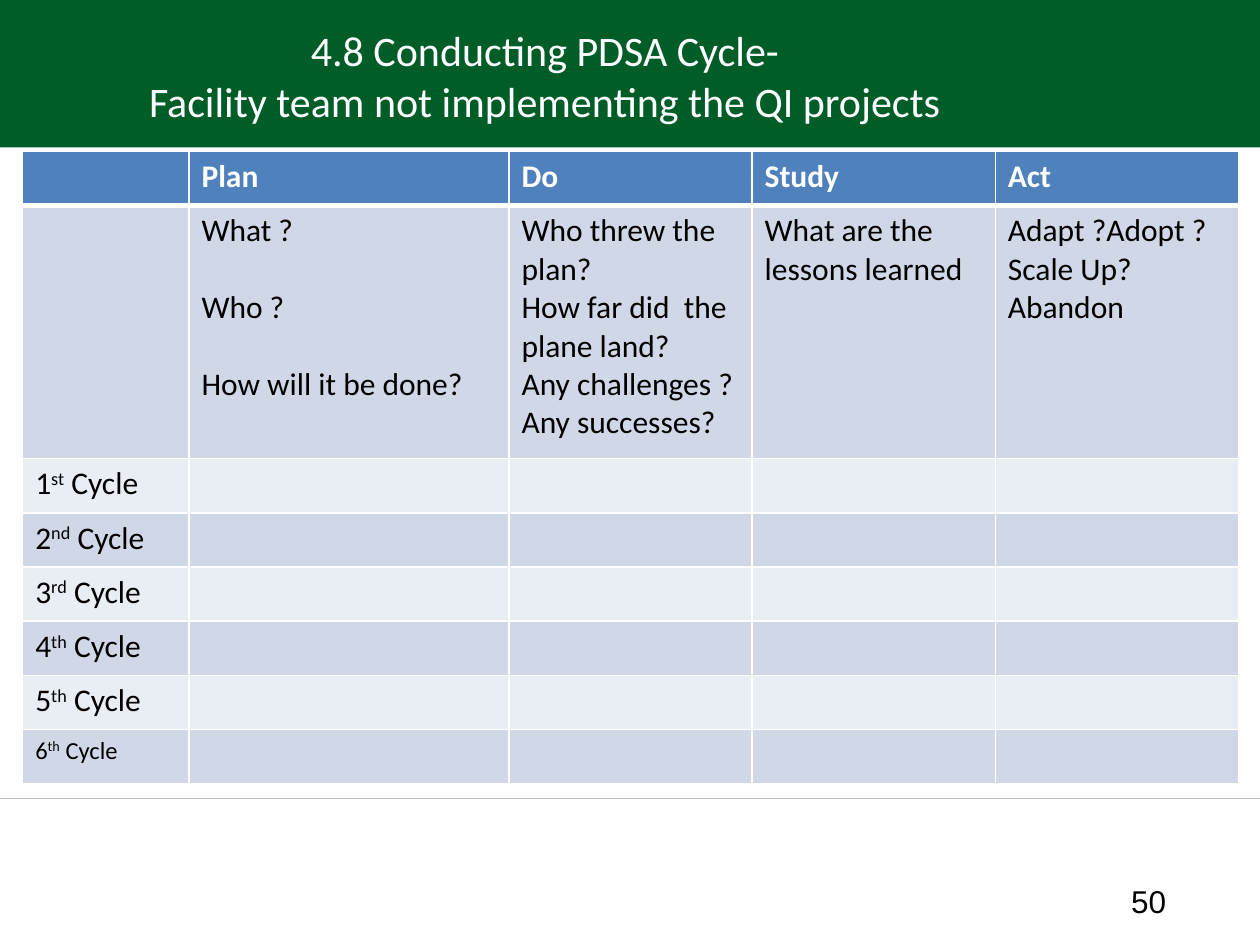
from lxml import etree
from pptx import Presentation
from pptx.dml.color import RGBColor
from pptx.enum.shapes import MSO_CONNECTOR, MSO_SHAPE
from pptx.enum.text import MSO_ANCHOR, PP_ALIGN
from pptx.oxml.ns import qn
from pptx.util import Inches, Pt

RECT = MSO_SHAPE.RECTANGLE
LINE = MSO_CONNECTOR.STRAIGHT
MID = MSO_ANCHOR.MIDDLE
TOP = MSO_ANCHOR.TOP
MIDDLE = PP_ALIGN.CENTER
LEFT = PP_ALIGN.LEFT

WIDE, HIGH = Inches(10), Inches(7.5)


def rgb(code):
    return RGBColor.from_string(code)


class Theme:
    green = rgb("005D28")
    rule = rgb("BFBFBF")
    head = rgb("4F81BD")
    bands = rgb("E9EDF4"), rgb("D0D8E8")
    title = {"size": Pt(24), "name": "Calibri", "color": rgb("FFFFFF")}
    label = {"size": Pt(18), "name": "Calibri", "color": rgb("FFFFFF"), "bold": True}
    body = {"size": Pt(18), "name": "Calibri", "color": rgb("000000"), "bold": False}
    small = {**body, "size": Pt(14)}
    number = {"size": Pt(18), "name": "Arial", "color": rgb("000000")}
    gap = Pt(22)


# Table content: header, prompts (lines per cell), ordinal endings
HEADS = ["", "Plan", "Do", "Study", "Act"]
PROMPTS = [
    [],
    ["What ?", "Who ?", "How will it be done?"],
    ["Who threw the plan?", "How far did  the plane land?",
     "Any challenges ?", "Any successes?"],
    ["What are the lessons learned"],
    ["Adapt ?Adopt ? Scale Up? Abandon"],
]
ENDS = ["st", "nd", "rd", "th", "th", "th"]
COLS = [1.32, 2.54] + [1.93] * 3
ROWS = [0.43, 2.01] + [0.43] * len(ENDS)


def style(font, look):
    for key, value in look.items():
        if key == "color":
            font.color.rgb = value
        else:
            setattr(font, key, value)


def write(frame, lines, look, align=LEFT, gap=0):
    for i, line in enumerate(lines):
        para = frame.paragraphs[0] if i == 0 else frame.add_paragraph()
        para.alignment = align
        if i and gap:
            para.space_before = gap
        run = para.add_run()
        run.text = line
        style(run.font, look)


def add_text(slide, box, lines, look, align=LEFT):
    frame = slide.shapes.add_textbox(*box).text_frame
    frame.word_wrap = True
    frame.vertical_anchor = MID
    write(frame, lines, look, align)


def add_band(slide, share):
    band = slide.shapes.add_shape(RECT, 0, 0, WIDE, int(HIGH * share))
    band.shadow.inherit = False
    band.fill.solid()
    band.fill.fore_color.rgb = Theme.green
    band.line.fill.background()


def add_rule(slide, share):
    y = int(HIGH * share)
    rule = slide.shapes.add_connector(LINE, 0, y, WIDE, y)
    rule.line.color.rgb = Theme.rule
    rule.line.width = Pt(0.75)
    etree.SubElement(rule._element.spPr, qn("a:effectLst"))


def edge(cell, side, width):
    line = etree.SubElement(cell._tc.get_or_add_tcPr(), qn("a:ln" + side), w=str(Pt(width)))
    fill = etree.SubElement(line, qn("a:solidFill"))
    etree.SubElement(fill, qn("a:srgbClr"), val="FFFFFF")


def paint(cell, row):
    for side in "LRTB":
        thick = (row == 0 and side == "B") or (row == 1 and side == "T")
        edge(cell, side, 3 if thick else 1)
    cell.fill.solid()
    cell.fill.fore_color.rgb = Theme.bands[row % 2] if row else Theme.head
    cell.vertical_anchor = TOP


def add_cycle(cell, count, end, look):
    para = cell.text_frame.paragraphs[0]
    for part in (str(count), end, " Cycle"):
        run = para.add_run()
        run.text = part
        style(run.font, look)
        if part == end:
            run._r.get_or_add_rPr().set("baseline", "30000")


def add_grid(slide, left, top):
    grid = slide.shapes.add_table(
        len(ROWS), len(COLS), left, top, Inches(sum(COLS)), Inches(sum(ROWS))).table
    for col, width in zip(grid.columns, COLS):
        col.width = Inches(width)
    for r, height in enumerate(ROWS):
        grid.rows[r].height = Inches(height)
        for c in range(len(COLS)):
            paint(grid.cell(r, c), r)

    # Header and prompts
    for c, (head, lines) in enumerate(zip(HEADS, PROMPTS)):
        if head:
            write(grid.cell(0, c).text_frame, [head], Theme.label)
            gap = Theme.gap if head == "Plan" else 0
            write(grid.cell(1, c).text_frame, lines, Theme.body, gap=gap)

    # One row for each cycle, the last in small type
    for n, end in enumerate(ENDS, 1):
        look = Theme.small if n == len(ENDS) else Theme.body
        add_cycle(grid.cell(n + 1, 0), n, end, look)


def main():
    deck = Presentation()
    deck.slide_width, deck.slide_height = WIDE, HIGH
    slide = deck.slides.add_slide(deck.slide_layouts[6])

    # Frame of the page
    add_band(slide, 0.156)
    add_rule(slide, 0.845)
    add_text(slide, (Inches(8.88), Inches(6.95), Inches(0.87), Inches(0.4)),
             ["50"], Theme.number)

    # Cycle table and title
    add_grid(slide, Inches(0.18), Inches(1.2))
    add_text(slide, (Inches(0.98), Inches(0.14), Inches(6.69), Inches(0.91)),
             ["4.8 Conducting PDSA Cycle-",
              "Facility team not implementing the QI projects"],
             Theme.title, MIDDLE)
    deck.save("out.pptx")


if __name__ == "__main__":
    main()
